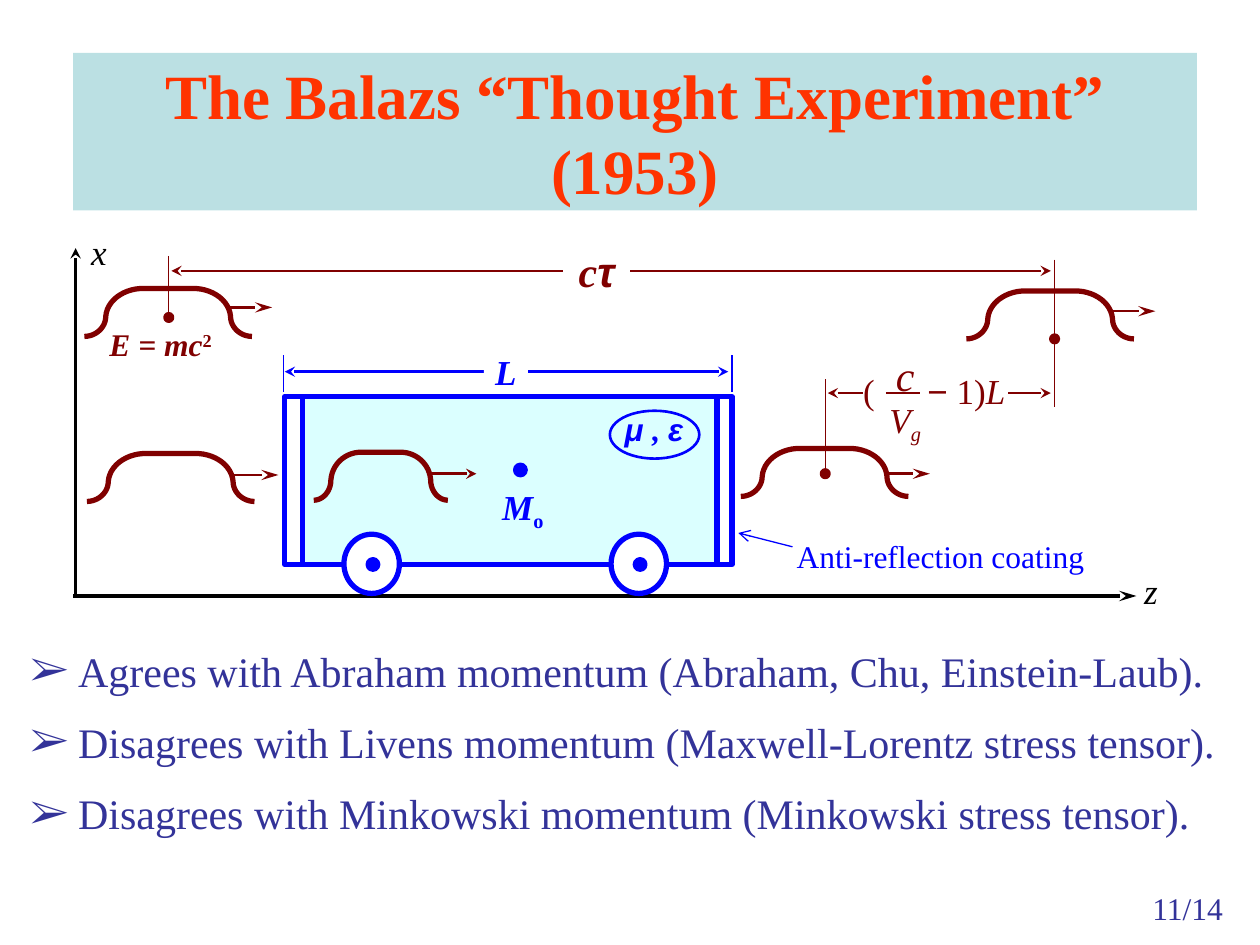
from lxml.etree import SubElement
from pptx import Presentation
from pptx.dml.color import RGBColor
from pptx.enum.shapes import MSO_CONNECTOR, MSO_SHAPE
from pptx.enum.text import MSO_ANCHOR, PP_ALIGN
from pptx.oxml.ns import qn
from pptx.util import Inches, Pt

COLORS = {
    "banner": "BBE0E3", "title": "FF3300", "glass": "CCFFFF", "blue": "0000FF",
    "maroon": "800000", "black": "000000", "white": "FFFFFF", "body": "333399",
}
SERIF, SANS = "Times New Roman", "Arial"
BULLETS = [
    "Agrees with Abraham momentum (Abraham, Chu, Einstein-Laub).",
    "Disagrees with Livens momentum (Maxwell-Lorentz stress tensor).",
    "Disagrees with Minkowski momentum (Minkowski stress tensor).",
]
# Left half of a pulse outline, as cubic curves from its lower left end
PULSE_WIDTH = 1.33
PULSE_CURVES = [
    [(0, 0.38), (0.09, 0.38), (0.17, 0.31), (0.17, 0.22)],
    [(0.17, 0.22), (0.18, 0.10), (0.30, 0.01), (0.44, 0)],
]


def rgb(name):
    return RGBColor.from_string(COLORS[name])


def add_box(slide, kind, box, fill=None, line=None, width=1):
    shape = slide.shapes.add_shape(kind, *map(Inches, box))
    shape.shadow.inherit = False
    if fill:
        shape.fill.solid()
        shape.fill.fore_color.rgb = rgb(fill)
    else:
        shape.fill.background()
    if line:
        shape.line.color.rgb = rgb(line)
        shape.line.width = Pt(width)
    else:
        shape.line.fill.background()
    return shape


def add_dot(slide, center_x, center_y, size, color):
    box = (center_x - size / 2, center_y - size / 2, size, size)
    add_box(slide, MSO_SHAPE.OVAL, box, color, color, 2)


def add_line(slide, start, end, color, width, head=None, tail=None, length="med"):
    connector = slide.shapes.add_connector(
        MSO_CONNECTOR.STRAIGHT, *map(Inches, start + end))
    connector.line.color.rgb = rgb(color)
    connector.line.width = Pt(width)
    for tag, tip in (("a:headEnd", head), ("a:tailEnd", tail)):
        if tip:
            SubElement(connector.line._ln, qn(tag), type=tip, w="med", len=length)
    SubElement(connector._element.spPr, qn("a:effectLst"))


def add_label(slide, box, runs, size, color, fill=None, bold=False, italic=False):
    """Each run is its text and a dict of font, italic or baseline changes."""
    if fill:
        shape = add_box(slide, MSO_SHAPE.RECTANGLE, box, fill)
    else:
        shape = slide.shapes.add_textbox(*map(Inches, box))
    frame = shape.text_frame
    frame.word_wrap = False
    frame.vertical_anchor = MSO_ANCHOR.TOP
    frame.margin_left = frame.margin_right = frame.margin_top = frame.margin_bottom = 0
    paragraph = frame.paragraphs[0]
    paragraph.alignment = PP_ALIGN.CENTER
    for text, changes in runs:
        run = paragraph.add_run()
        run.text = text
        font = run.font
        font.name = changes.get("font", SERIF)
        font.size = Pt(size)
        font.bold = bold
        font.italic = changes.get("italic", italic)
        font.color.rgb = rgb(color)
        if "baseline" in changes:
            run._r.get_or_add_rPr().set("baseline", str(changes["baseline"] * 1000))
    return paragraph


def curve_points(curve, steps=12):
    weights = (1, 3, 3, 1)
    for step in range(steps + 1):
        t = step / steps
        yield tuple(
            sum(weight * (1 - t) ** (3 - power) * t ** power * point[axis]
                for power, (weight, point) in enumerate(zip(weights, curve)))
            for axis in (0, 1))


def add_pulse(slide, left, top, arrow_x, arrow_y, stretch=1, length="lg"):
    rise = [point for curve in PULSE_CURVES for point in curve_points(curve)]
    fall = [(PULSE_WIDTH - x, y) for x, y in reversed(rise)]
    points = [(Inches(left + stretch * x), Inches(top + y)) for x, y in rise + fall]
    builder = slide.shapes.build_freeform(*points[0])
    builder.add_line_segments(points[1:], close=False)
    pulse = builder.convert_to_shape()
    pulse.shadow.inherit = False
    pulse.fill.background()
    pulse.line.color.rgb = rgb("maroon")
    pulse.line.width = Pt(3)
    add_line(slide, (arrow_x, arrow_y), (arrow_x + 0.36, arrow_y), "maroon", 1.5,
             tail="stealth", length=length)


def add_title(slide):
    banner = add_box(slide, MSO_SHAPE.RECTANGLE, (0.58, 0.42, 8.92, 1.25), "banner")
    frame = banner.text_frame
    frame.text = "The Balazs “Thought Experiment” (1953)"
    frame.word_wrap = True
    frame.vertical_anchor = MSO_ANCHOR.MIDDLE
    frame.paragraphs[0].alignment = PP_ALIGN.CENTER
    font = frame.paragraphs[0].runs[0].font
    font.name, font.size, font.bold = SERIF, Pt(36), True
    font.color.rgb = rgb("title")


def add_axes(slide):
    add_line(slide, (0.58, 4.73), (9.02, 4.73), "black", 2, tail="stealth", length="lg")
    add_line(slide, (0.6, 4.72), (0.6, 1.97), "black", 2, tail="stealth")
    for name, left, top in (("z", 9, 4.52), ("x", 0.65, 1.83)):
        add_label(slide, (left, top, 0.27, 0.38), [(name, {})], 20, "black", italic=True)


def add_cart(slide):
    glass = add_box(slide, MSO_SHAPE.RECTANGLE, (2.4, 3.15, 3.29, 1.33), "glass", "blue", 3)
    solid_color = glass._element.spPr.find(qn("a:solidFill"))[0]
    SubElement(solid_color, qn("a:alpha"), val="70000")
    add_box(slide, MSO_SHAPE.RECTANGLE, (2.26, 3.15, 3.55, 1.33), None, "blue", 3)
    # Material constants and centre of mass
    add_label(slide, (4.88, 3.25, 0.62, 0.38),
              [("μ ", {"font": SANS}), (", ", {}), ("ε", {"font": SANS})],
              18, "blue", bold=True, italic=True)
    add_box(slide, MSO_SHAPE.OVAL, (4.84, 3.26, 0.71, 0.38), None, "blue", 1.5)
    add_dot(slide, 4.13, 3.73, 0.09, "blue")
    add_label(slide, (3.96, 3.85, 0.38, 0.4),
              [("M", {}), ("o", {"italic": False, "baseline": -25})],
              20, "blue", bold=True, italic=True)
    # Wheels
    for left in (2.73, 4.85):
        add_box(slide, MSO_SHAPE.OVAL, (left, 4.24, 0.44, 0.47), "white", "blue", 3)
        add_dot(slide, left + 0.23, 4.48, 0.09, "blue")
    # Coating callout
    add_label(slide, (6.31, 4.26, 2.31, 0.38), [("Anti-reflection coating", {})], 18, "blue")
    add_line(slide, (6.29, 4.34), (5.86, 4.23), "blue", 0.75, tail="arrow")


def add_dimensions(slide):
    # Cart length
    for x in (2.25, 5.81):
        add_line(slide, (x, 2.82), (x, 3.11), "blue", 1)
    add_line(slide, (2.26, 2.95), (5.78, 2.95), "blue", 1.5, "stealth", "stealth")
    add_label(slide, (3.84, 2.78, 0.35, 0.28), [("L", {})], 20, "blue", "white", True, True)
    # Pulse centres
    for x, top, bottom, center_y in ((1.34, 2.03, 2.51, 2.52), (8.37, 2.06, 3.23, 2.69),
                                     (6.55, 3.01, 3.77, 3.76)):
        add_line(slide, (x, top), (x, bottom), "maroon", 0.75)
        add_dot(slide, x, center_y, 0.06, "maroon")
    # Distance in free space, and lag of the delayed pulse
    for left, y in ((1.36, 2.15), (6.57, 3.12)):
        add_line(slide, (left, y), (8.34, y), "maroon", 0.75, "stealth", "stealth")
    add_label(slide, (4.47, 1.95, 0.53, 0.38), [("c", {}), ("τ", {"font": SANS})],
              24, "maroon", "white", True, True)
    factor = add_label(slide, (6.85, 2.93, 1.15, 0.38),
                       [("(\t", {}), ("−", {"font": SANS}), (" 1)", {}), ("L", {"italic": True})],
                       20, "maroon", "white")
    factor.alignment = PP_ALIGN.LEFT
    tabs = SubElement(factor._p.get_or_add_pPr(), qn("a:tabLst"))
    SubElement(tabs, qn("a:tab"), pos=str(Inches(0.51)), algn="l")
    add_label(slide, (7.05, 2.77, 0.27, 0.38), [("c", {})], 24, "maroon", italic=True)
    add_label(slide, (7.01, 3.16, 0.35, 0.42), [("V", {}), ("g", {"baseline": -25})],
              20, "maroon", italic=True)
    add_line(slide, (7.03, 3.12), (7.3, 3.12), "maroon", 0.75)


def add_bullets(slide):
    box = slide.shapes.add_textbox(Inches(0.24), Inches(5.12), Inches(9.5), Inches(1.75))
    frame = box.text_frame
    frame.word_wrap = True
    frame.margin_left = frame.margin_right = frame.margin_top = frame.margin_bottom = 0
    frame.text = "\n".join(BULLETS)
    for index, paragraph in enumerate(frame.paragraphs):
        if index:
            paragraph.space_before = Pt(12)
        properties = paragraph._p.get_or_add_pPr()
        properties.set("marL", str(Inches(0.38)))
        properties.set("indent", str(-Inches(0.38)))
        SubElement(properties, qn("a:buFont"), typeface=SERIF)
        SubElement(properties, qn("a:buChar"), char="➢")
        font = paragraph.runs[0].font
        font.name, font.size = SERIF, Pt(24)
        font.color.rgb = rgb("body")


def main():
    presentation = Presentation()
    presentation.slide_width, presentation.slide_height = Inches(10), Inches(7.5)
    slide = presentation.slides.add_slide(presentation.slide_layouts[6])
    add_title(slide)
    add_axes(slide)
    add_cart(slide)
    # Light pulses before, inside and after the cart, and in free space
    add_pulse(slide, 0.67, 2.29, 1.8, 2.44)
    add_pulse(slide, 7.67, 2.31, 8.81, 2.47)
    add_pulse(slide, 0.69, 3.6, 1.85, 3.77)
    add_pulse(slide, 5.88, 3.56, 7.02, 3.76)
    add_pulse(slide, 2.49, 3.59, 3.42, 3.76, stretch=0.8, length="med")
    add_label(slide, (0.83, 2.58, 0.89, 0.38),
              [("E = mc", {}), ("2", {"italic": False, "baseline": 30})],
              18, "maroon", bold=True, italic=True)
    add_dimensions(slide)
    add_bullets(slide)
    # Page number
    add_label(slide, (8.92, 7.06, 1.01, 0.3), [("11/14", {})], 18, "body")
    presentation.save("out.pptx")


if __name__ == "__main__":
    main()
